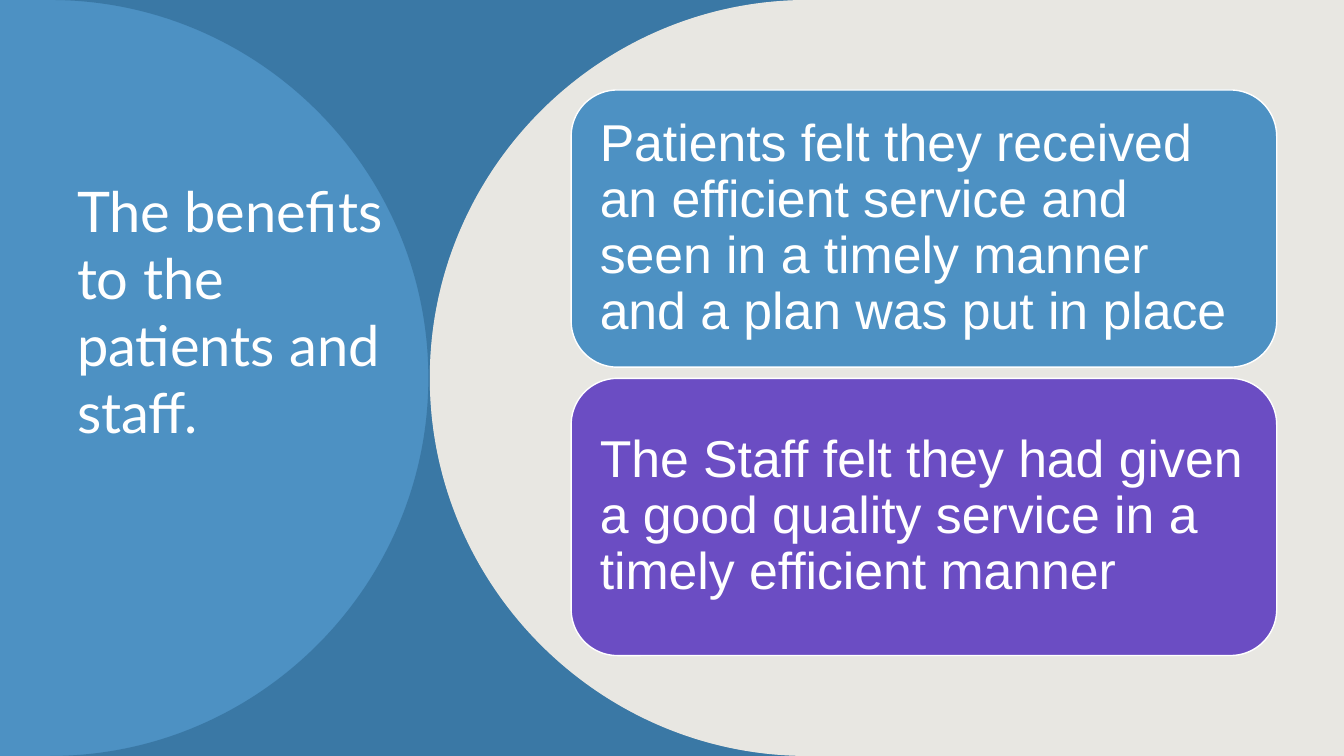
import pptx
import pptx.dml.color
import pptx.enum.shapes
import pptx.enum.text
import pptx.util
from lxml import etree
from pptx.oxml.ns import qn

Pt = pptx.util.Pt
RGBColor = pptx.dml.color.RGBColor
MIDDLE = pptx.enum.text.MSO_ANCHOR.MIDDLE

BLUE = RGBColor(0x4D, 0x91, 0xC3)
NAVY = RGBColor(0x33, 0x6E, 0x99)
PURPLE = RGBColor(0x6B, 0x4D, 0xC3)
BEIGE = RGBColor(0xE8, 0xE7, 0xE2)
WHITE = RGBColor(0xFF, 0xFF, 0xFF)

WIDTH, HEIGHT = 960, 540
RADIUS = HEIGHT / 2
HANDLE = RADIUS * 0.55
LEFT_CENTRE, RIGHT_CENTRE = 36, 577

CARD_LEFT, CARD_TOP, CARD_WIDTH, CARD_HEIGHT, CARD_GAP = 408, 64.25, 504, 198, 8
CARDS = [
    ("Patients felt they received an efficient service and seen in a timely "
     "manner and a plan was put in place", BLUE),
    ("The Staff felt they had given a good quality service in a timely "
     "efficient manner", PURPLE),
]


def half_circle(centre, direction):
    near = centre + direction * HANDLE
    far = centre + direction * RADIUS
    return [(centre, 0),
            (near, 0), (far, RADIUS - HANDLE), (far, RADIUS),
            (far, RADIUS + HANDLE), (near, HEIGHT), (centre, HEIGHT)]


def bend_arc(panel):
    lines = list(panel.element.iter(qn("a:lnTo")))
    for first in (1, 4):
        corners = lines[first:first + 3]
        curve = etree.Element(qn("a:cubicBezTo"))
        corners[0].addprevious(curve)
        for corner in corners:
            curve.append(corner[0])
            corner.getparent().remove(corner)


def add_curved_panel(slide, edge, arc, color, opacity=None):
    outline = [(edge, 0)] + arc + [(edge, HEIGHT)]
    points = [(Pt(x), Pt(y)) for x, y in outline]
    builder = slide.shapes.build_freeform(*points[0])
    builder.add_line_segments(points[1:], close=True)
    panel = builder.convert_to_shape()
    bend_arc(panel)
    panel.shadow.inherit = False
    panel.fill.solid()
    panel.fill.fore_color.rgb = color
    panel.line.fill.background()
    if opacity is not None:
        color_element = next(panel.element.spPr.iter(qn("a:srgbClr")))
        etree.SubElement(color_element, qn("a:alpha"), val=str(opacity * 1000))


def write_text(shape, text, font_name, size):
    frame = shape.text_frame
    frame.word_wrap = True
    frame.vertical_anchor = MIDDLE
    paragraph = frame.paragraphs[0]
    paragraph.text = text
    paragraph.alignment = pptx.enum.text.PP_ALIGN.LEFT
    paragraph.font.name = font_name
    paragraph.font.size = Pt(size)
    paragraph.font.color.rgb = WHITE
    return frame


def add_title(slide):
    title = slide.shapes.add_textbox(Pt(48), Pt(54), Pt(235), Pt(336))
    write_text(title, "The benefits to the patients and staff.", "Lato", 40)


def add_card(slide, top, text, color):
    card = slide.shapes.add_shape(
        pptx.enum.shapes.MSO_SHAPE.ROUNDED_RECTANGLE,
        Pt(CARD_LEFT), Pt(top), Pt(CARD_WIDTH), Pt(CARD_HEIGHT))
    card.shadow.inherit = False
    card.fill.solid()
    card.fill.fore_color.rgb = color
    card.line.color.rgb = WHITE
    card.line.width = Pt(1)
    frame = write_text(card, text, "Arial", 37)
    frame.margin_left = frame.margin_right = Pt(10.8)
    frame.margin_top = frame.margin_bottom = Pt(10.8)
    frame.paragraphs[0].line_spacing = 0.9


def main():
    presentation = pptx.Presentation()
    presentation.slide_width = Pt(WIDTH)
    presentation.slide_height = Pt(HEIGHT)
    slide = presentation.slides.add_slide(presentation.slide_layouts[6])
    slide.background.fill.solid()
    slide.background.fill.fore_color.rgb = BEIGE

    left_arc = half_circle(LEFT_CENTRE, 1)
    right_arc = half_circle(RIGHT_CENTRE, -1)
    add_curved_panel(slide, 0, right_arc, BLUE)
    add_curved_panel(slide, 615, left_arc, NAVY, opacity=70)
    add_title(slide)
    add_curved_panel(slide, 776, right_arc, BEIGE)
    for index, (text, color) in enumerate(CARDS):
        add_card(slide, CARD_TOP + index * (CARD_HEIGHT + CARD_GAP), text, color)

    presentation.save("out.pptx")


if __name__ == "__main__":
    main()
